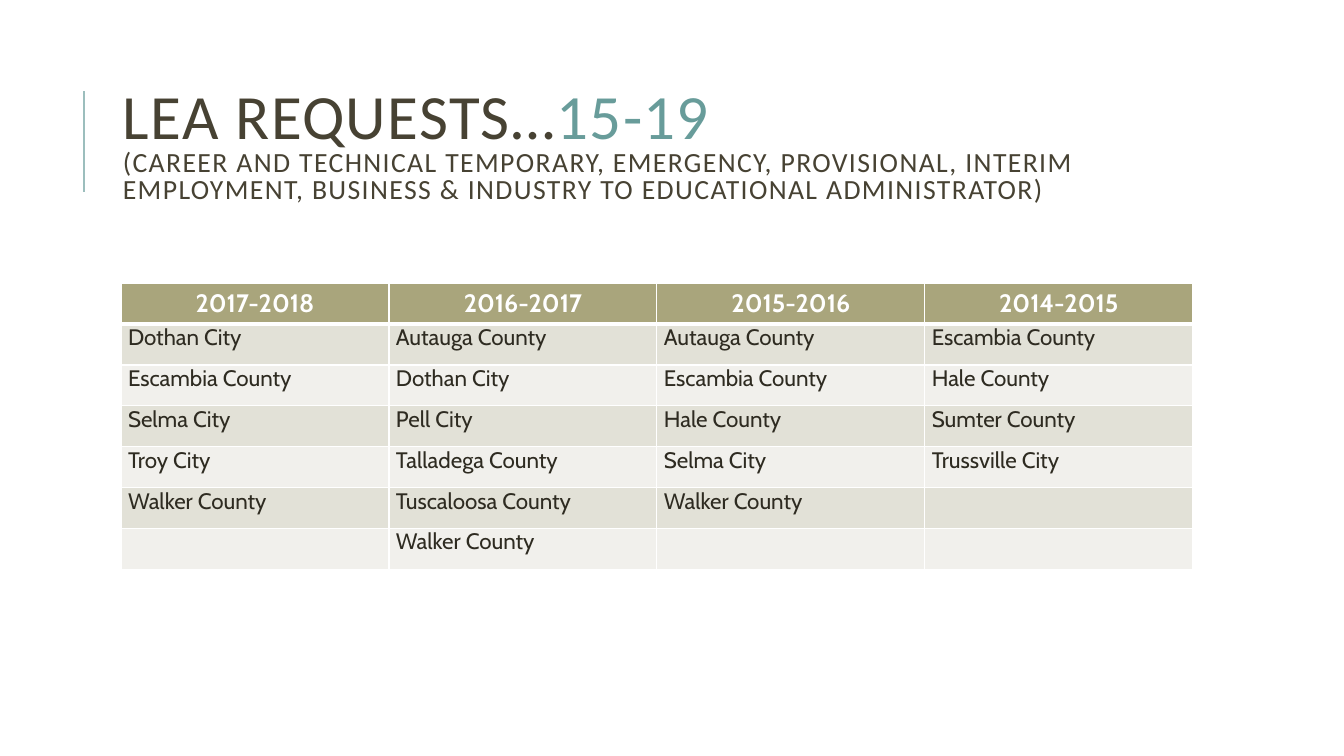
from itertools import zip_longest

from lxml import etree
from pptx import Presentation
from pptx.dml.color import RGBColor
from pptx.enum.shapes import MSO_CONNECTOR as Connector
from pptx.enum.text import MSO_ANCHOR as Anchor, PP_ALIGN as Align
from pptx.oxml.ns import qn
from pptx.util import Inches, Pt

COLORS = {
    "rule": "9CBEBD",
    "title": "474233",
    "ages": "689C9A",
    "header": "A9A57C",
    "odd": "E2E1D7",
    "even": "F1F0EC",
    "body": "2E2B21",
    "white": "FFFFFF",
}


def set_font(font, color, **formats):
    font.color.rgb = RGBColor.from_string(COLORS[color])
    for name, value in formats.items():
        setattr(font, name, value)


def add_border(cell, side, width):
    border = etree.SubElement(cell._tc.get_or_add_tcPr(), qn(f"a:{side}"), w=str(Pt(width)))
    fill = etree.SubElement(border, qn("a:solidFill"))
    etree.SubElement(fill, qn("a:srgbClr"), val=COLORS["white"])


prs = Presentation()
prs.slide_width, prs.slide_height = Inches(13.33), Inches(7.5)
slide = prs.slides.add_slide(prs.slide_layouts[6])

# Rule beside the title
rule = slide.shapes.add_connector(
    Connector.STRAIGHT, Inches(0.83), Inches(1.9), Inches(0.83), Inches(0.9))
rule.line.color.rgb = RGBColor.from_string(COLORS["rule"])
rule.line.width = Pt(1.5)
etree.SubElement(rule._element.spPr, qn("a:effectLst"))

# Title
title = slide.shapes.add_textbox(Inches(1.12), Inches(0.9), Inches(10.63), Inches(1.15))
frame = title.text_frame
for name, value in {"word_wrap": True, "vertical_anchor": Anchor.TOP,
                    "margin_top": 0, "margin_bottom": 0}.items():
    setattr(frame, name, value)
heading = frame.paragraphs[0]
heading.line_spacing = 0.8
TITLE_PARTS = [
    ("LEA REQUESTS…", 45, "title"),
    ("15-19", 45, "ages"),
    ("(CAREER AND TECHNICAL TEMPORARY, EMERGENCY, PROVISIONAL, INTERIM EMPLOYMENT, "
     "BUSINESS & INDUSTRY TO EDUCATIONAL ADMINISTRATOR)", 19.8, "title"),
]
for text, size, color in TITLE_PARTS:
    if text.startswith("("):
        heading.add_line_break()
    part = heading.add_run()
    part.text = text
    set_font(part.font, color, size=Pt(size), name="Calibri")
    part.font._element.set("spc", "100")

# Requests by school year
REQUESTS = {
    "2017-2018": ["Dothan City", "Escambia County", "Selma City", "Troy City",
                  "Walker County"],
    "2016-2017": ["Autauga County", "Dothan City", "Pell City", "Talladega County",
                  "Tuscaloosa County", "Walker County"],
    "2015-2016": ["Autauga County", "Escambia County", "Hale County", "Selma City",
                  "Walker County"],
    "2014-2015": ["Escambia County", "Hale County", "Sumter County", "Trussville City"],
}
rows = [tuple(REQUESTS), *zip_longest(*REQUESTS.values(), fillvalue="")]
requests = slide.shapes.add_table(
    len(rows), len(REQUESTS), Inches(1.2), Inches(2.81), Inches(10.63), Inches(2.84)).table

for r, row in enumerate(rows):
    is_header = r == 0
    band = "header" if is_header else "odd" if r % 2 else "even"
    for c, text in enumerate(row):
        cell = requests.cell(r, c)
        cell.text = text
        entry = cell.text_frame.paragraphs[0]
        if is_header:
            entry.alignment = Align.CENTER
            set_font(entry.font, "white", size=Pt(18), name="Cabin", bold=True)
        else:
            set_font(entry.font, "body", size=Pt(16), name="Cabin", bold=False)
            for name, value in {"margin_left": 0.07, "margin_right": 0.07,
                                "margin_top": 0, "margin_bottom": 0}.items():
                setattr(cell, name, Inches(value))
        for side in ("lnL", "lnR", "lnT", "lnB"):
            heavy = (r, side) in ((0, "lnB"), (1, "lnT"))
            add_border(cell, side, 3 if heavy else 1)
        cell.fill.solid()
        cell.fill.fore_color.rgb = RGBColor.from_string(COLORS[band])

prs.save("out.pptx")
